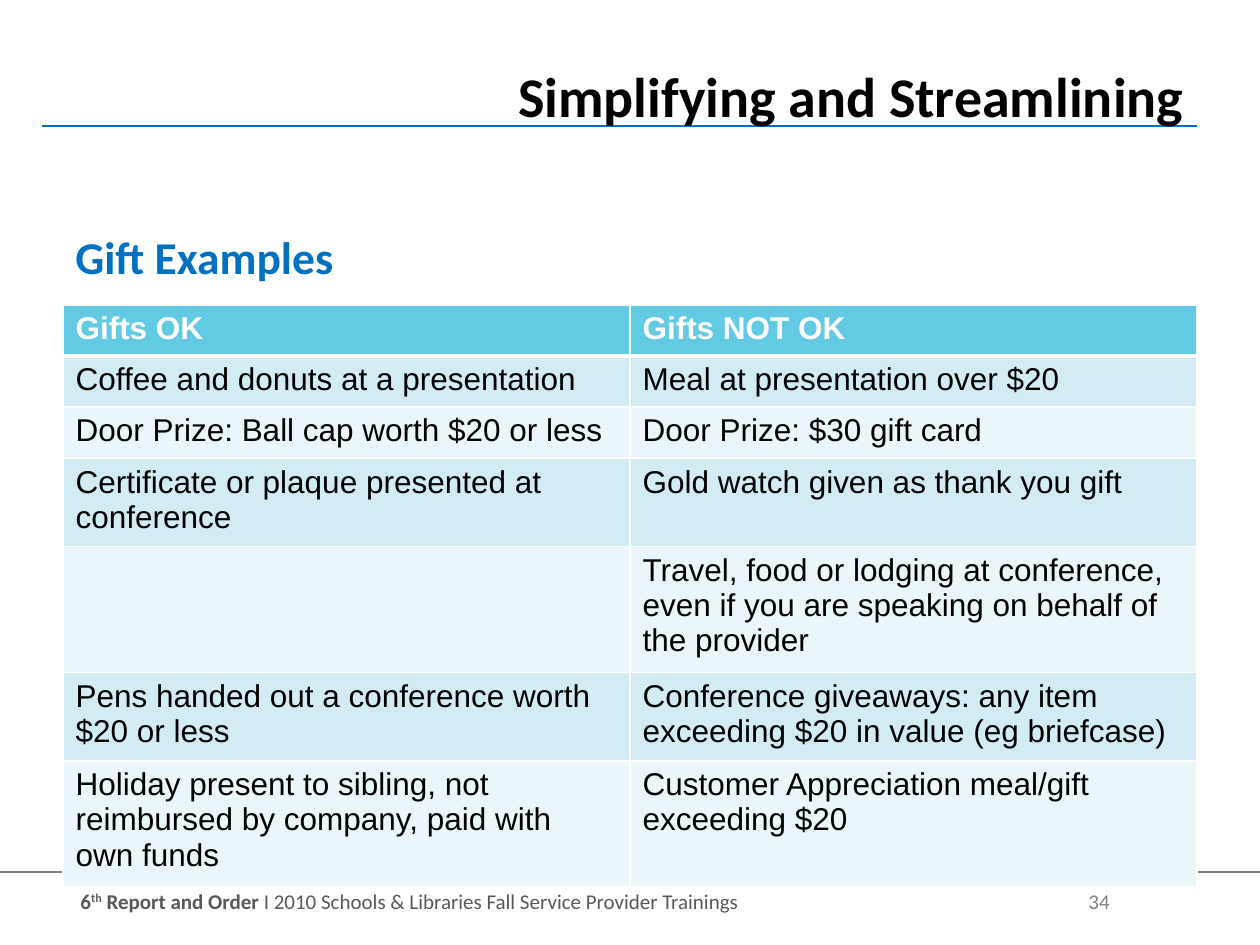
"""Build the gift examples slide with its comparison table."""
import lxml.etree
import pptx
import pptx.dml.color
import pptx.enum.shapes
import pptx.enum.text
import pptx.oxml.ns
import pptx.util
from dataclasses import dataclass

Pt = pptx.util.Pt
qn = pptx.oxml.ns.qn
ALIGN = pptx.enum.text.PP_ALIGN

TITLE = "Simplifying and Streamlining"
HEADING = "Gift Examples"
ROWS = [
    ("Gifts OK", "Gifts NOT OK"),
    ("Coffee and donuts at a presentation", "Meal at presentation over $20"),
    ("Door Prize: Ball cap worth $20 or less", "Door Prize: $30 gift card"),
    ("Certificate or plaque presented at conference",
     "Gold watch given as thank you gift"),
    ("", "Travel, food or lodging at conference, even if you are speaking "
         "on behalf of the provider"),
    ("Pens handed out a conference worth $20 or less",
     "Conference giveaways: any item exceeding $20 in value (eg briefcase)"),
    ("Holiday present to sibling, not reimbursed by company, paid with own funds",
     "Customer Appreciation meal/gift exceeding $20"),
]


@dataclass(frozen=True)
class Theme:
    """Colours, fonts and type sizes of the slide."""
    black: str = "000000"
    white: str = "FFFFFF"
    blue: str = "0070C0"
    grey: str = "808080"
    dark: str = "595959"
    header: str = "62CAE3"
    bands: tuple = ("D3ECF4", "EAF6FA")
    head_font: str = "Calibri"
    body_font: str = "Arial"
    title: int = 32
    heading: int = 26
    body: int = 18
    footer: int = 12


T = Theme()
FOOTER = [
    ("6", T.dark, True, 0),
    ("th", T.dark, True, 30000),
    (" Report and Order ", T.dark, True, 0),
    ("I 2010 Schools & Libraries Fall Service Provider Trainings\t", T.dark, False, 0),
    ("34", T.grey, False, 0),
]
RULES = [(0, 498.24, 720, T.grey, 0.75), (23.76, 72, 684, T.blue, 1.25)]
TABLE_LEFT, TABLE_TOP, TABLE_WIDTH, ROW_HEIGHT = 36, 174.24, 648, 29.2


def rgb(value):
    """Turn a hex string into a colour."""
    return pptx.dml.color.RGBColor.from_string(value)


def style(font, name, size, color, bold):
    """Set the look of a font."""
    font.name, font.size, font.bold = name, Pt(size), bold
    font.color.rgb = rgb(color)


def add_run(p, text, name, size, color, bold):
    """Add one styled run to a paragraph."""
    r = p.add_run()
    r.text = text
    style(r.font, name, size, color, bold)
    return r


def add_box(s, left, top, width, height, inset):
    """Add a wrapping text box and return its first paragraph."""
    tf = s.shapes.add_textbox(Pt(left), Pt(top), Pt(width), Pt(height)).text_frame
    tf.word_wrap = True
    tf.margin_top = Pt(inset)
    return tf.paragraphs[0]


def add_rule(s, left, y, right, color, weight):
    """Add a horizontal line."""
    straight = pptx.enum.shapes.MSO_CONNECTOR.STRAIGHT
    line = s.shapes.add_connector(straight, Pt(left), Pt(y), Pt(right), Pt(y))
    line.line.color.rgb = rgb(color)
    line.line.width = Pt(weight)
    lxml.etree.SubElement(line._element.spPr, qn("a:effectLst"))


def add_borders(cell, top, bottom):
    """Draw white borders around a cell."""
    tcPr = cell._tc.get_or_add_tcPr()
    for side, weight in (("L", 1), ("R", 1), ("T", top), ("B", bottom)):
        ln = lxml.etree.SubElement(tcPr, qn(f"a:ln{side}"), w=str(Pt(weight)))
        fill = lxml.etree.SubElement(ln, qn("a:solidFill"))
        lxml.etree.SubElement(fill, qn("a:srgbClr"), val=T.white)


def add_gift_table(s):
    """Add the table of allowed and refused gifts."""
    table = s.shapes.add_table(
        len(ROWS), len(ROWS[0]), Pt(TABLE_LEFT), Pt(TABLE_TOP),
        Pt(TABLE_WIDTH), Pt(ROW_HEIGHT * len(ROWS))).table
    for i, row in enumerate(ROWS):
        head = i == 0
        color = T.white if head else T.black
        for j, text in enumerate(row):
            cell = table.cell(i, j)
            add_borders(cell, 3 if i == 1 else 1, 3 if head else 1)
            cell.fill.solid()
            cell.fill.fore_color.rgb = rgb(T.header if head else T.bands[(i - 1) % 2])
            p = cell.text_frame.paragraphs[0]
            if text:
                add_run(p, text, T.body_font, T.body, color, head)
            else:
                style(p.font, T.body_font, T.body, color, head)


def add_footer(s):
    """Add the footer line with the page number at a tab stop."""
    p = add_box(s, 38.88, 504, 645.12, 24.48, 3.6)
    tabs = lxml.etree.SubElement(p._p.get_or_add_pPr(), qn("a:tabLst"))
    lxml.etree.SubElement(tabs, qn("a:tab"), pos=str(Pt(576)), algn="l")
    for text, color, bold, baseline in FOOTER:
        r = add_run(p, text, T.head_font, T.footer, color, bold)
        if baseline:
            r._r.get_or_add_rPr().set("baseline", str(baseline))


def main():
    """Build and save the slide."""
    prs = pptx.Presentation()
    prs.slide_width, prs.slide_height = Pt(720), Pt(540)
    s = prs.slides.add_slide(prs.slide_layouts[6])
    add_footer(s)
    for rule in RULES:
        add_rule(s, *rule)
    add_gift_table(s)
    p = add_box(s, 36, 126, 648, 48.24, 5)
    add_run(p, HEADING, T.head_font, T.heading, T.blue, True)
    p = add_box(s, 264.24, 30.24, 419.76, 41.76, 5)
    p.alignment = ALIGN.RIGHT
    add_run(p, TITLE, T.head_font, T.title, T.black, True)
    prs.save("out.pptx")


if __name__ == "__main__":
    main()
